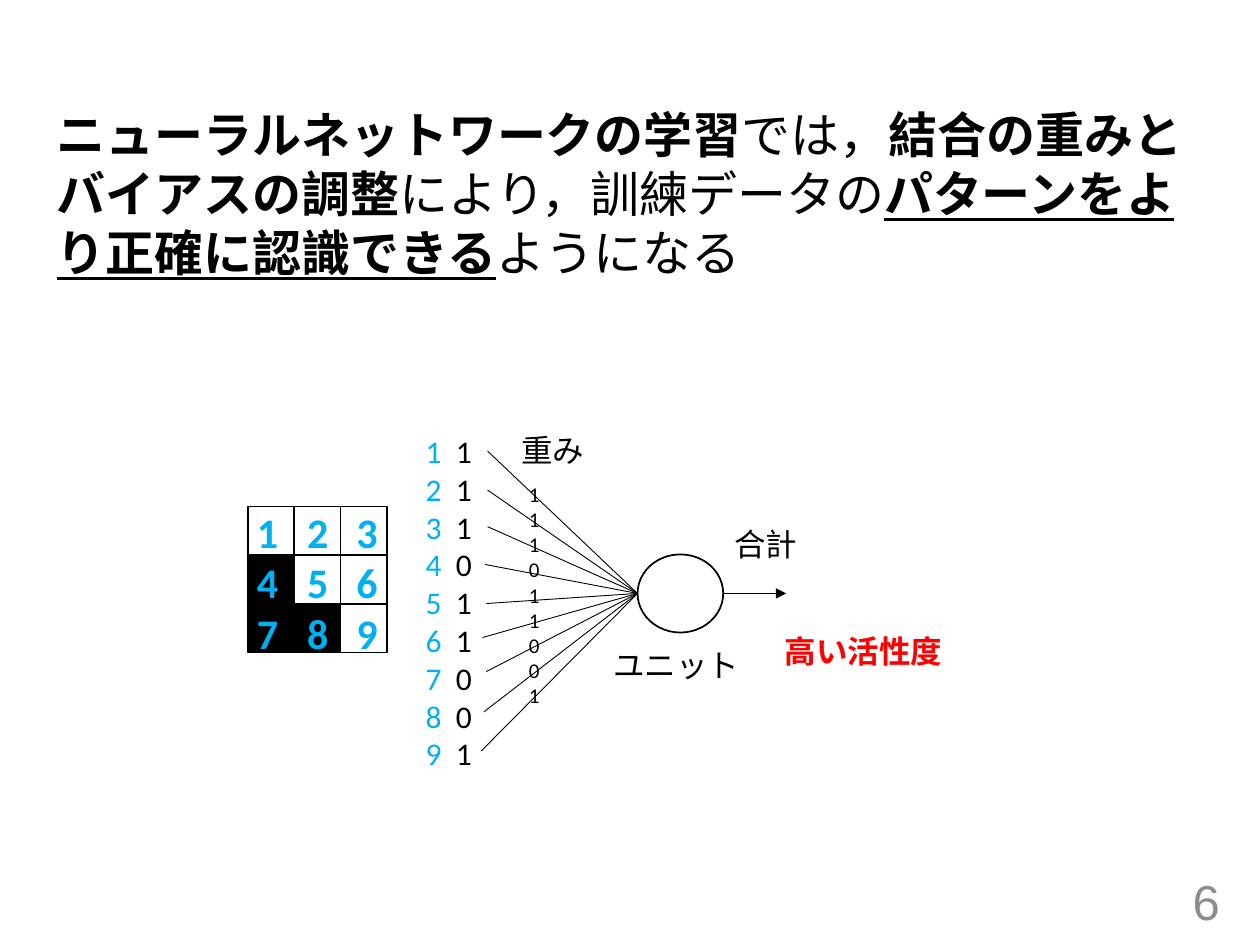
import pptx
import pptx.dml.color
import pptx.enum.shapes
import pptx.enum.text
import pptx.oxml
import pptx.oxml.ns
import pptx.util

Inches = pptx.util.Inches
Pt = pptx.util.Pt
RGBColor = pptx.dml.color.RGBColor
MSO_SHAPE = pptx.enum.shapes.MSO_SHAPE
PP_ALIGN = pptx.enum.text.PP_ALIGN
MSO_ANCHOR = pptx.enum.text.MSO_ANCHOR

BLACK = RGBColor(0x00, 0x00, 0x00)
BLUE = RGBColor(0x00, 0xB0, 0xF0)
RED = RGBColor(0xFF, 0x00, 0x00)
GRAY = RGBColor(0x8C, 0x8C, 0x8C)

STATEMENT = [
    ("ニューラルネットワークの学習", {"bold": True}),
    ("では,".replace(",", "，"), {}),
    ("結合の重みとバイアスの調整", {"bold": True}),
    ("により，訓練データの", {}),
    ("パターンをより正確に認識できる", {"bold": True, "underline": True}),
    ("ようになる", {}),
]
PATTERN = [1, 1, 1, 0, 1, 1, 0, 0, 1]
WEIGHTS = [1, 1, 1, 0, 1, 1, 0, 0, 1]
INPUT_ENDS = [(3.87, 3.58), (3.87, 3.89), (3.87, 4.18), (3.85, 4.48), (3.86, 4.79),
              (3.83, 5.06), (3.86, 5.33), (3.84, 5.65), (3.82, 5.96)]


def append_element(parent, tag, **attributes):
    element = pptx.oxml.parse_xml(f"<{tag} {pptx.oxml.ns.nsdecls('a')}/>")
    for name, value in attributes.items():
        element.set(name, str(value))
    parent.append(element)
    return element


def add_run(paragraph, text, size, color, name="Calibri", **formats):
    run = paragraph.add_run()
    run.text = text
    run.font.color.rgb = color
    values = {"size": Pt(size), "name": name, **formats}
    for attribute, value in values.items():
        setattr(run.font, attribute, value)


def add_text(slide, box, lines, tabs=(), wrap=False, **formats):
    """Each line is a list of (text, color) runs; tabs are tab stops in inches."""
    frame = slide.shapes.add_textbox(*map(Inches, box)).text_frame
    frame.word_wrap = wrap
    if wrap:
        frame.margin_right = 0
    for index, runs in enumerate(lines):
        paragraph = frame.add_paragraph() if index else frame.paragraphs[0]
        if tabs:
            tab_list = append_element(paragraph._p.get_or_add_pPr(), "a:tabLst")
            for stop in tabs:
                append_element(tab_list, "a:tab", pos=int(Inches(stop)), algn="l")
        for text, color in runs:
            add_run(paragraph, text, color=color, **formats)
    return frame


def add_outlined(slide, kind, box, fill=None):
    shape = slide.shapes.add_shape(kind, *map(Inches, box))
    shape.shadow.inherit = False
    if fill is None:
        shape.fill.background()
    else:
        shape.fill.solid()
        shape.fill.fore_color.rgb = fill
    shape.line.color.rgb = BLACK
    shape.line.width = Pt(1)


def add_line(slide, start, end, arrow=False):
    connector = slide.shapes.add_connector(
        pptx.enum.shapes.MSO_CONNECTOR.STRAIGHT, *map(Inches, (*start, *end)))
    connector.line.color.rgb = BLACK
    connector.line.width = Pt(0.5)
    if arrow:
        append_element(connector.line._get_or_add_ln(), "a:tailEnd", type="triangle")
    append_element(connector._element.spPr, "a:effectLst")


def add_statement(slide, box):
    title = slide.shapes.title
    title._element.getparent().remove(title._element)
    body = slide.placeholders[1]
    body.left, body.top, body.width, body.height = map(Inches, box)
    frame = body.text_frame
    frame.auto_size = pptx.enum.text.MSO_AUTO_SIZE.NONE
    frame.vertical_anchor = MSO_ANCHOR.TOP
    paragraph = frame.paragraphs[0]
    paragraph.space_before = Pt(0)
    properties = paragraph._p.get_or_add_pPr()
    properties.set("marL", "0")
    properties.set("indent", "0")
    append_element(properties, "a:buNone")
    for text, formats in STATEMENT:
        add_run(paragraph, text, 28, BLACK, "Arial", **formats)


def add_pattern_grid(slide, box):
    left, top, width, height = box
    cell_width, cell_height = width / 3, height / 3
    for index, value in enumerate(PATTERN):
        row, column = divmod(index, 3)
        cell = (left + column * cell_width, top + row * cell_height,
                cell_width, cell_height)
        add_outlined(slide, MSO_SHAPE.RECTANGLE, cell, None if value else BLACK)
    rows = [[("\t".join(str(first + step) for step in range(3)), BLUE)]
            for first in (1, 4, 7)]
    add_text(slide, (left - 0.03, top - 0.05, width + 0.06, 1.31), rows,
             tabs=(0.4, 0.79), wrap=True, size=24, bold=True)


def add_inputs(slide, box):
    lines = [[(str(number), BLUE), (f"\t{value}", BLACK)]
             for number, value in enumerate(PATTERN, 1)]
    add_text(slide, box, lines, tabs=(0.24,), wrap=True, size=18)


def add_unit(slide, box):
    left, top, width, height = box
    middle = top + height / 2
    add_outlined(slide, MSO_SHAPE.OVAL, box)
    for start in INPUT_ENDS:
        add_line(slide, start, (left, middle))
    add_line(slide, (left + width, middle), (left + width + 0.5, middle), arrow=True)
    add_text(slide, (left - 0.96, top - 0.63, 0.33, 1.92),
             [[(str(weight), BLACK)] for weight in WEIGHTS], wrap=True, size=12)
    labels = [
        ("ユニット", (-0.29, 0.68, 1.21), BLACK, False),
        ("合計", (0.67, -0.28, 0.71), BLACK, False),
        ("重み", (-1.02, -1.03, 0.71), BLACK, False),
        ("高い活性度", (1.07, 0.57, 1.46), RED, True),
    ]
    for text, (across, down, label_width), color, bold in labels:
        add_text(slide, (left + across, top + down, label_width, 0.4),
                 [[(text, color)]], size=18, bold=bold)


def add_page_number(slide, box):
    frame = add_text(slide, box, [[("6", GRAY)]], size=28, name="Arial")
    frame.word_wrap = True
    frame.vertical_anchor = MSO_ANCHOR.MIDDLE
    frame.paragraphs[0].alignment = PP_ALIGN.RIGHT


def main():
    presentation = pptx.Presentation()
    presentation.slide_width = Inches(10)
    presentation.slide_height = Inches(7.5)
    slide = presentation.slides.add_slide(presentation.slide_layouts[1])
    add_statement(slide, (0.35, 0.78, 9.36, 1.65))
    add_page_number(slide, (7.53, 6.95, 2.25, 0.4))
    add_pattern_grid(slide, (1.97, 4.02, 1.1, 1.16))
    add_inputs(slide, (3.28, 3.38, 0.57, 2.83))
    add_unit(slide, (5.06, 4.4, 0.68, 0.62))
    presentation.save("out.pptx")


if __name__ == "__main__":
    main()
